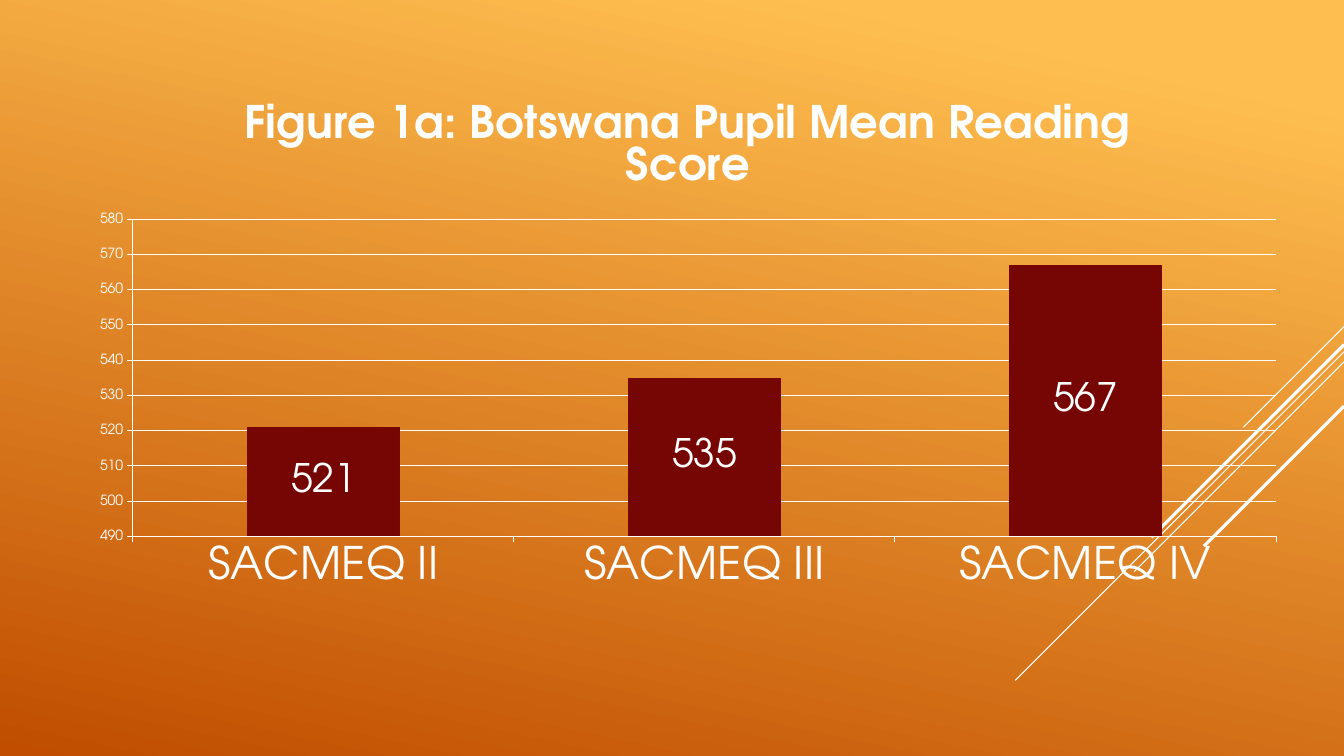
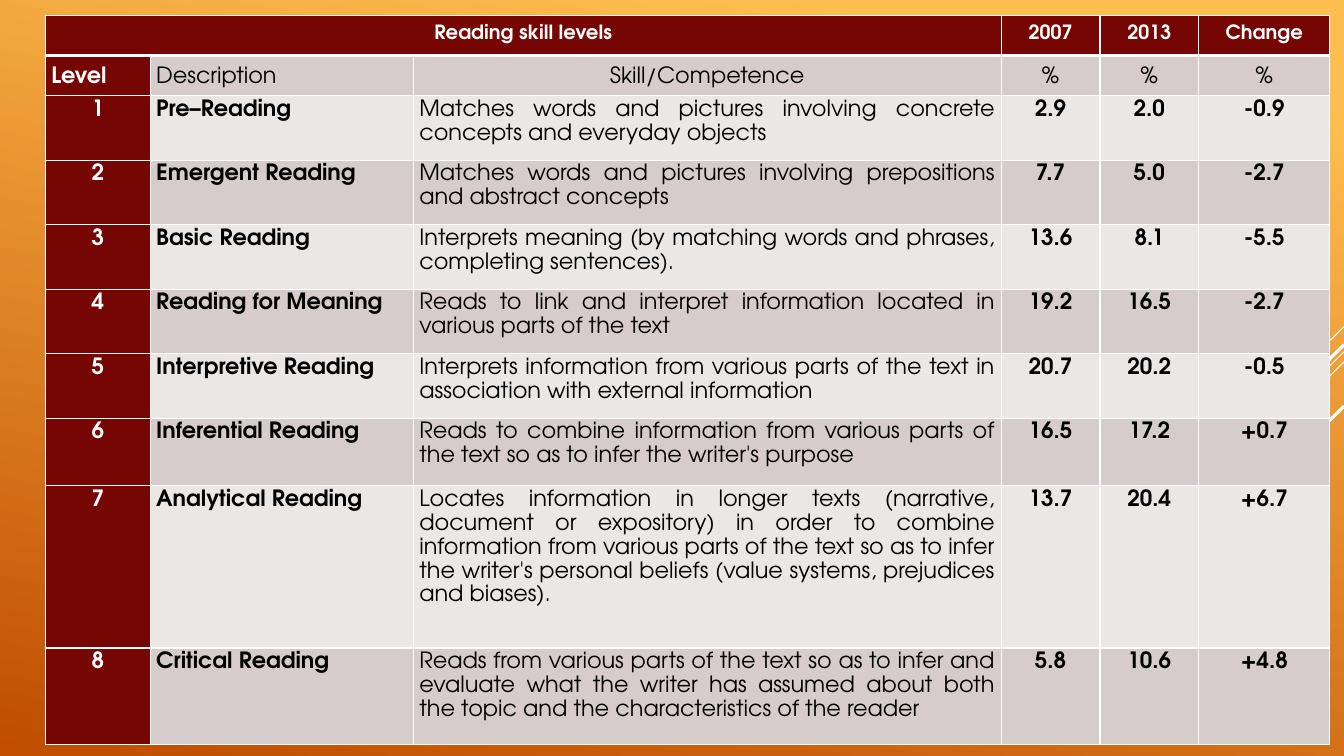
"""Build two slides on pupils' reading scores: a column chart and a skill level table."""
from dataclasses import dataclass
from typing import Any

from lxml import etree
from pptx import Presentation
from pptx.chart.data import CategoryChartData
from pptx.dml.color import RGBColor
from pptx.enum.chart import XL_CHART_TYPE, XL_LABEL_POSITION, XL_TICK_MARK
from pptx.enum.shapes import MSO_CONNECTOR
from pptx.enum.text import MSO_ANCHOR, PP_ALIGN
from pptx.oxml.ns import qn
from pptx.presentation import Presentation as Deck
from pptx.slide import Slide
from pptx.table import _Cell
from pptx.util import Inches, Pt

COLUMN_CLUSTERED = XL_CHART_TYPE.COLUMN_CLUSTERED
LABEL_CENTER = XL_LABEL_POSITION.CENTER
TICK_OUTSIDE, TICK_NONE = XL_TICK_MARK.OUTSIDE, XL_TICK_MARK.NONE
STRAIGHT = MSO_CONNECTOR.STRAIGHT
TOP = MSO_ANCHOR.TOP
LEFT, CENTER, JUSTIFY = PP_ALIGN.LEFT, PP_ALIGN.CENTER, PP_ALIGN.JUSTIFY

WHITE = RGBColor(0xFF, 0xFF, 0xFF)
BLACK = RGBColor(0x00, 0x00, 0x00)
MAROON = RGBColor(0x76, 0x06, 0x03)
BAND_DARK = RGBColor(0xD6, 0xCC, 0xCC)
BAND_LIGHT = RGBColor(0xEC, 0xE7, 0xE7)
GLOW = RGBColor(0xFF, 0xBF, 0x50)
EMBER = RGBColor(0xC0, 0x4D, 0x00)

FONT = "TeX Gyre Adventor"
SLIDE_W, SLIDE_H = 13.33, 7.5
BLANK_LAYOUT = 6


@dataclass(frozen=True)
class Streak:
    """A 45 degree line running down from the right edge."""

    top: float
    run: float
    weight: float


@dataclass(frozen=True)
class CellStyle:
    """The look of one table cell."""

    fill: RGBColor
    color: RGBColor = BLACK
    bold: bool = False
    align: PP_ALIGN = CENTER
    size: int = 16
    spacing: float = 1.15


@dataclass(frozen=True)
class SkillLevel:
    """One reading level with its shares of pupils."""

    name: str
    competence: str
    share_2007: str
    share_2013: str
    change: str
    height: float = 0.64
    name_align: PP_ALIGN = LEFT


STREAKS = (
    Streak(3.24, 1.0, 0.75),
    Streak(3.49, 3.26, 0.75),
    Streak(3.59, 2.08, 0.75),
    Streak(3.42, 1.91, 2.25),
    Streak(4.03, 1.39, 2.25),
)

MEAN_SCORES = {"SACMEQ II": 521, "SACMEQ III": 535, "SACMEQ IV": 567}

COLUMN_WIDTHS = (1.04, 2.61, 5.83, 0.98, 0.98, 1.3)
HEADING_HEIGHT = 0.4
HEADINGS = ("Reading skill levels", "", "", "2007", "2013", "Change")
SUBHEADINGS = ("Level", "Description", "Skill/Competence", "%", "%", "%")
LEVELS = (
    SkillLevel("Pre–Reading",
               "Matches words and pictures involving concrete concepts and everyday objects",
               "2.9", "2.0", "-0.9", name_align=JUSTIFY),
    SkillLevel("Emergent Reading",
               "Matches words and pictures involving prepositions and abstract concepts",
               "7.7", "5.0", "-2.7"),
    SkillLevel("Basic Reading",
               "Interprets meaning (by matching words and phrases, completing sentences).",
               "13.6", "8.1", "-5.5"),
    SkillLevel("Reading for Meaning",
               "Reads to link and interpret information located in various parts of the text",
               "19.2", "16.5", "-2.7"),
    SkillLevel("Interpretive Reading",
               "Interprets information from various parts of the text in association "
               "with external information",
               "20.7", "20.2", "-0.5"),
    SkillLevel("Inferential Reading",
               "Reads to combine information from various parts of the text so as to "
               "infer the writer's purpose",
               "16.5", "17.2", "+0.7", 0.67),
    SkillLevel("Analytical Reading",
               "Locates information in longer texts (narrative, document or expository) "
               "in order to combine information from various parts of the text so as to "
               "infer the writer's personal beliefs (value systems, prejudices and biases).",
               "13.7", "20.4", "+6.7", 1.61),
    SkillLevel("Critical Reading",
               "Reads from various parts of the text so as to infer and evaluate what the "
               "writer has assumed about both the topic and the characteristics of the reader",
               "5.8", "10.6", "+4.8", 0.96),
)


def apply_format(target: Any, values: dict[str, Any]) -> None:
    """Set each named attribute of the target."""
    for attribute, value in values.items():
        setattr(target, attribute, value)


def style_font(font: Any, size: int, color: RGBColor = WHITE, bold: bool = False) -> None:
    """Give a font the deck's typeface with a size, colour and weight."""
    apply_format(font, {"name": FONT, "size": Pt(size), "bold": bold})
    font.color.rgb = color


def style_line(line: Any, weight: float) -> None:
    """Make a line solid white."""
    line.color.rgb = WHITE
    line.width = Pt(weight)


def paint_master(deck: Deck, slide: Slide) -> None:
    """Give the master its gradient and move the streaks drawn on a slide to it."""
    master = deck.slide_master
    backdrop = master.background.fill
    backdrop.gradient()
    backdrop.gradient_angle = 360 - 102
    for stop, position, color in zip(backdrop.gradient_stops, (0.1, 1.0), (GLOW, EMBER)):
        stop.position = position
        stop.color.rgb = color
    for number, streak in enumerate(STREAKS, start=20):
        connector = slide.shapes.add_connector(
            STRAIGHT, Inches(SLIDE_W), Inches(streak.top),
            Inches(SLIDE_W - streak.run), Inches(streak.top + streak.run))
        style_line(connector.line, streak.weight)
        etree.SubElement(connector.element.spPr, qn("a:effectLst"))
        connector.element.nvCxnSpPr.cNvPr.set("id", str(number))
        master.element.cSld.spTree.append(connector.element)


def draw_score_chart(slide: Slide) -> None:
    """Draw the mean reading scores as columns."""
    scores = CategoryChartData(number_format="General")
    scores.categories = list(MEAN_SCORES)
    scores.add_series("Series 1", list(MEAN_SCORES.values()))
    chart = slide.shapes.add_chart(
        COLUMN_CLUSTERED, Inches(0.75), Inches(0.75), Inches(12.15), Inches(5.19), scores).chart
    style_font(chart.font, 10)
    apply_format(chart, {"has_legend": False, "has_title": True})
    heading = chart.chart_title.text_frame.paragraphs[0]
    heading.alignment = CENTER
    heading_run = heading.add_run()
    heading_run.text = "Figure 1a: Botswana Pupil Mean Reading Score"
    style_font(heading_run.font, 32, bold=True)

    for axis, size in ((chart.category_axis, 32), (chart.value_axis, 10)):
        apply_format(axis, {"major_tick_mark": TICK_OUTSIDE, "minor_tick_mark": TICK_NONE})
        style_font(axis.tick_labels.font, size)
        style_line(axis.format.line, 0.75)
    apply_format(chart.value_axis, {
        "minimum_scale": 490, "maximum_scale": 580, "major_unit": 10,
        "has_major_gridlines": True})
    style_line(chart.value_axis.major_gridlines.format.line, 0.75)

    plot = chart.plots[0]
    apply_format(plot, {"gap_width": 150, "vary_by_categories": False, "has_data_labels": True})
    apply_format(plot.data_labels, {"show_value": True, "position": LABEL_CENTER})
    style_font(plot.data_labels.font, 28)
    columns = plot.series[0].format.fill
    columns.solid()
    columns.fore_color.rgb = MAROON


def border_cell(cell: _Cell, top: float, bottom: float) -> None:
    """Draw white borders, with the sides one point wide."""
    properties = cell._tc.get_or_add_tcPr()
    for place, (side, weight) in enumerate(
            (("lnL", 1), ("lnR", 1), ("lnT", top), ("lnB", bottom))):
        border = etree.Element(qn(f"a:{side}"), w=str(Pt(weight)))
        paint = etree.SubElement(border, qn("a:solidFill"))
        etree.SubElement(paint, qn("a:srgbClr"), val=str(WHITE))
        properties.insert(place, border)


def fill_cell(cell: _Cell, text: str, style: CellStyle) -> None:
    """Write text in a cell and style it."""
    apply_format(cell, {
        "margin_left": Inches(0.06), "margin_right": Inches(0.06),
        "margin_top": Inches(0.01), "margin_bottom": 0, "vertical_anchor": TOP})
    cell.fill.solid()
    cell.fill.fore_color.rgb = style.fill
    paragraph = cell.text_frame.paragraphs[0]
    apply_format(paragraph, {"alignment": style.align, "line_spacing": style.spacing})
    style_font(paragraph.font, style.size, style.color, style.bold)
    if text:
        run = paragraph.add_run()
        run.text = text
        style_font(run.font, style.size, style.color, style.bold)


def table_rows() -> list[list[tuple[str, CellStyle]]]:
    """List every row as pairs of text and style."""
    heading = CellStyle(MAROON, WHITE, True, size=14, spacing=1.5)
    subheadings = [
        CellStyle(MAROON, WHITE, True, LEFT, spacing=1.5),
        CellStyle(BAND_DARK, align=LEFT, spacing=1.5),
        *[CellStyle(BAND_DARK, spacing=1.5)] * 4,
    ]
    rows = [[(text, heading) for text in HEADINGS], list(zip(SUBHEADINGS, subheadings))]
    for number, level in enumerate(LEVELS, start=1):
        band = BAND_LIGHT if number % 2 else BAND_DARK
        share = CellStyle(band, bold=True)
        rows.append([
            (str(number), CellStyle(MAROON, WHITE, True)),
            (level.name, CellStyle(band, bold=True, align=level.name_align)),
            (level.competence, CellStyle(band, align=JUSTIFY)),
            (level.share_2007, share),
            (level.share_2013, share),
            (level.change, share),
        ])
    return rows


def draw_level_table(slide: Slide) -> None:
    """Draw the table of reading skill levels."""
    rows = table_rows()
    heights = [HEADING_HEIGHT] * 2 + [level.height for level in LEVELS]
    table = slide.shapes.add_table(
        len(rows), len(COLUMN_WIDTHS), Inches(0.45), Inches(0.15),
        Inches(sum(COLUMN_WIDTHS)), Inches(sum(heights))).table
    apply_format(table, {"first_row": False, "horz_banding": False})
    for column, width in zip(table.columns, COLUMN_WIDTHS):
        column.width = Inches(width)
    for row, height in zip(table.rows, heights):
        row.height = Inches(height)
    for row_index, row in enumerate(rows):
        for column_index, (text, style) in enumerate(row):
            cell = table.cell(row_index, column_index)
            fill_cell(cell, text, style)
            border_cell(cell, 3 if row_index == 1 else 1, 3 if row_index == 0 else 1)
    table.cell(0, 0).merge(table.cell(0, 2))


def main() -> None:
    """Build and save the deck."""
    deck = Presentation()
    deck.slide_width, deck.slide_height = Inches(SLIDE_W), Inches(SLIDE_H)
    blank = deck.slide_layouts[BLANK_LAYOUT]
    score_slide, level_slide = (deck.slides.add_slide(blank) for _ in range(2))
    paint_master(deck, score_slide)
    draw_score_chart(score_slide)
    draw_level_table(level_slide)
    deck.save("out.pptx")


if __name__ == "__main__":
    main()
